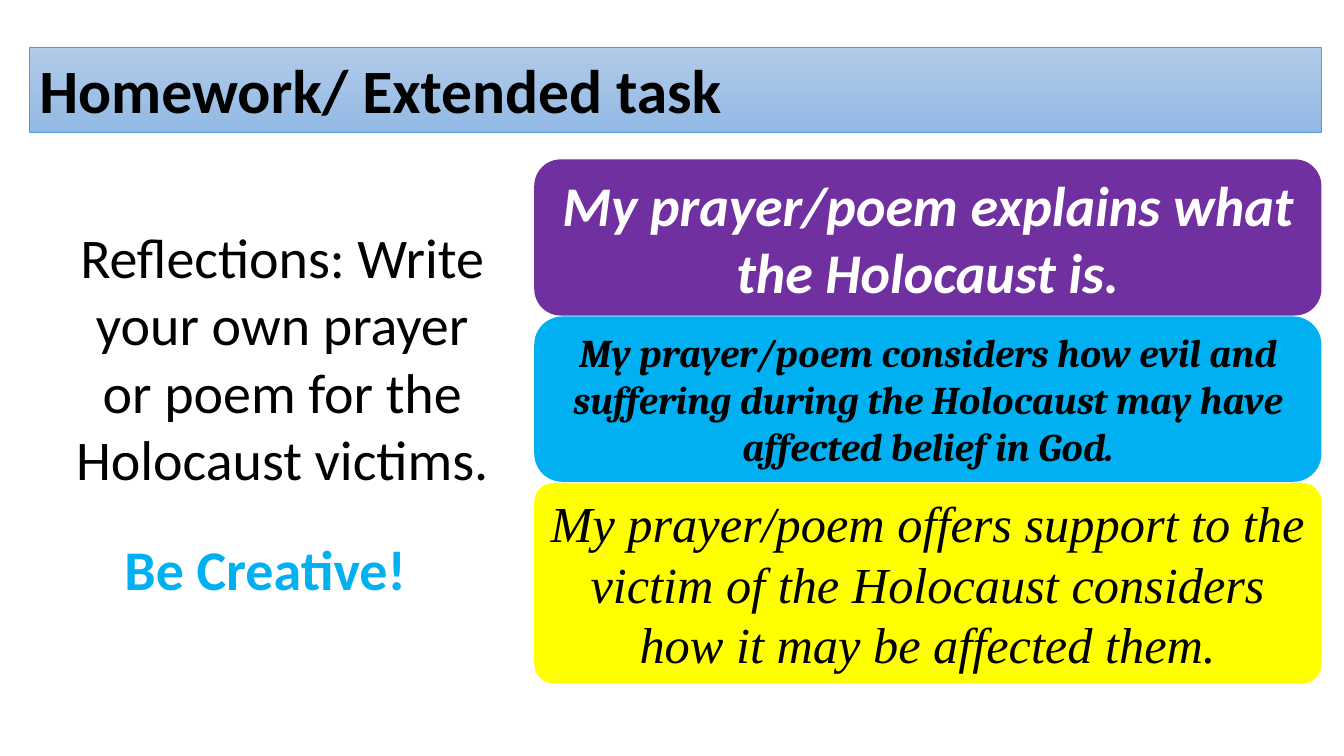
from pptx import Presentation
from pptx.dml.color import RGBColor
from pptx.enum.shapes import MSO_SHAPE
from pptx.enum.text import MSO_ANCHOR, MSO_AUTO_SIZE, PP_ALIGN
from pptx.util import Pt

BLACK = RGBColor(0x00, 0x00, 0x00)
WHITE = RGBColor(0xFF, 0xFF, 0xFF)
PURPLE = RGBColor(0x70, 0x30, 0xA0)
SKY = RGBColor(0x00, 0xB0, 0xF0)
YELLOW = RGBColor(0xFF, 0xFF, 0x00)
BANNER_TOP = RGBColor(0xB1, 0xCB, 0xE9)
BANNER_BOTTOM = RGBColor(0x93, 0xB9, 0xE4)
BANNER_LINE = RGBColor(0x5B, 0x9B, 0xD5)

TITLE = "Homework/ Extended task"

# text, (left, top, width, height), colour, bold
PROMPTS = [
    ("Reflections: Write your own prayer or poem for the Holocaust victims.",
     (42.5, 155.5, 318.2, 200.9), BLACK, False),
    ("Be Creative!", (42.5, 378, 293.8, 55.4), SKY, True),
]

# text, height, corner, fill, font, size, colour, bold
CRITERIA = [
    ("My prayer/poem explains what the Holocaust is.",
     111.6, 0.17, PURPLE, "Calibri", 40, WHITE, True),
    ("My prayer/poem considers how evil and suffering during the Holocaust "
     "may have affected belief in God.",
     118.1, 0.17, SKY, "Cambria", 28, BLACK, True),
    ("My prayer/poem offers support to the victim of the Holocaust considers "
     "how it may be affected them.",
     143.3, 0.096, YELLOW, "Times New Roman", 36, BLACK, False),
]
CARD_LEFT, CARD_TOP, CARD_WIDTH, CARD_GAP = 381.6, 113.8, 562.3, 0.7


def write(shape, text, font, size, color, bold=False, italic=False,
          align=PP_ALIGN.CENTER, anchor=MSO_ANCHOR.TOP):
    frame = shape.text_frame
    frame.word_wrap = True
    frame.auto_size = MSO_AUTO_SIZE.NONE
    frame.vertical_anchor = anchor
    paragraph = frame.paragraphs[0]
    paragraph.alignment = align
    run = paragraph.add_run()
    run.text = text
    run.font.name = font
    run.font.size = Pt(size)
    run.font.bold = bold
    run.font.italic = italic
    run.font.color.rgb = color


def add_banner(slide):
    title = slide.shapes.title
    title.left, title.top, title.width, title.height = map(Pt, (20.9, 33.8, 923, 60.5))
    title.fill.gradient()
    title.fill.gradient_angle = 270
    for stop, color in zip(title.fill.gradient_stops, (BANNER_TOP, BANNER_BOTTOM)):
        stop.color.rgb = color
    title.line.color.rgb = BANNER_LINE
    title.line.width = Pt(0.5)
    write(title, TITLE, "Calibri", 44, BLACK, bold=True, align=PP_ALIGN.LEFT)


def add_prompts(slide):
    for text, box, color, bold in PROMPTS:
        prompt = slide.shapes.add_textbox(*map(Pt, box))
        write(prompt, text, "Calibri", 40, color, bold)


def add_criteria(slide):
    group = slide.shapes.add_group_shape()
    top = CARD_TOP
    for text, height, corner, fill, font, size, color, bold in CRITERIA:
        card = group.shapes.add_shape(MSO_SHAPE.ROUNDED_RECTANGLE, Pt(CARD_LEFT),
                                      Pt(top), Pt(CARD_WIDTH), Pt(height))
        card.adjustments[0] = corner
        card.shadow.inherit = False
        card.fill.solid()
        card.fill.fore_color.rgb = fill
        card.line.fill.background()
        write(card, text, font, size, color, bold, italic=True,
              anchor=MSO_ANCHOR.MIDDLE)
        top += height + CARD_GAP


def main():
    presentation = Presentation()
    presentation.slide_width = Pt(960)
    presentation.slide_height = Pt(540)
    slide = presentation.slides.add_slide(presentation.slide_layouts.get_by_name("Title Only"))
    add_banner(slide)
    add_prompts(slide)
    add_criteria(slide)
    presentation.save("out.pptx")


if __name__ == "__main__":
    main()
